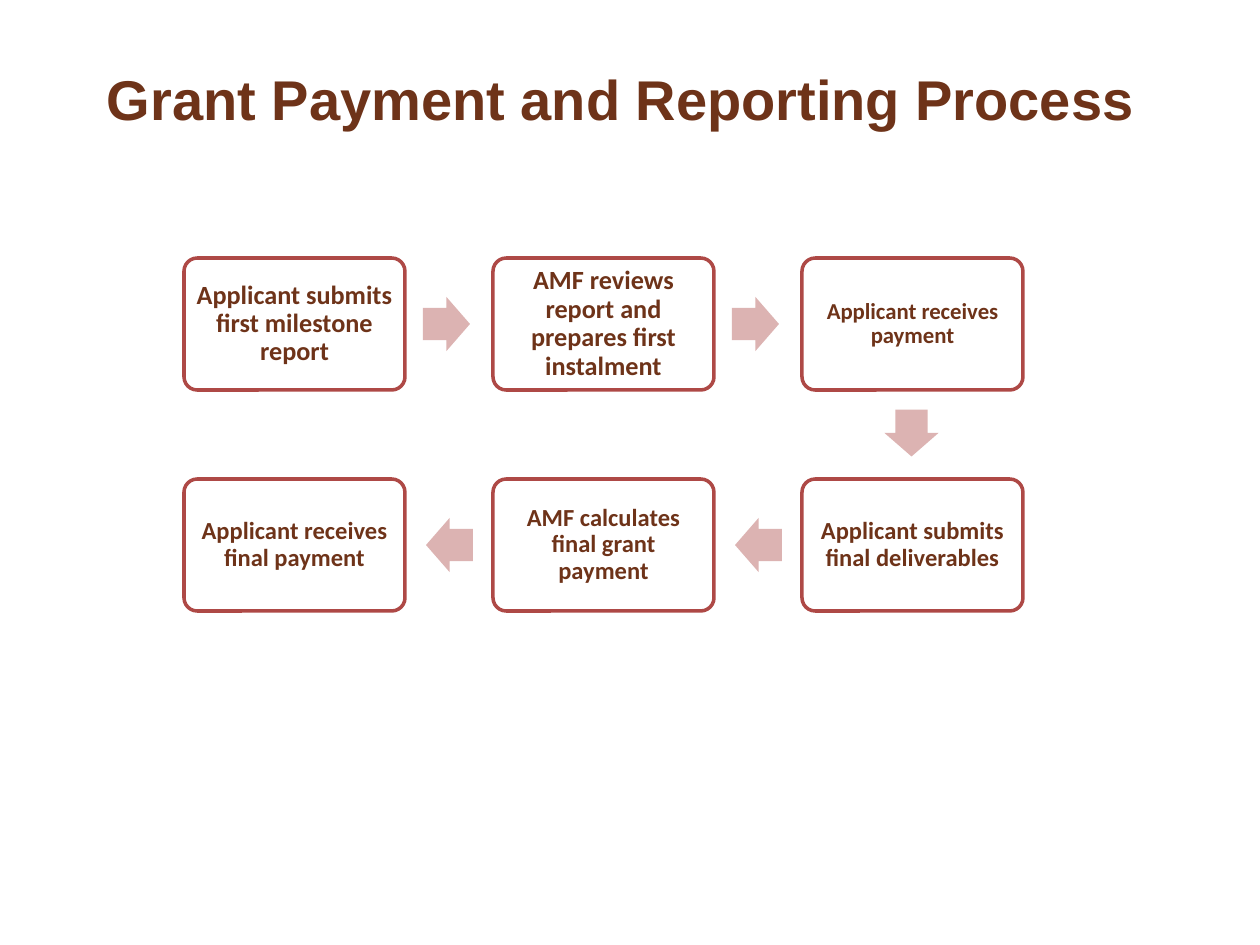
from pptx import Presentation
from pptx.dml.color import RGBColor
from pptx.enum.shapes import MSO_SHAPE
from pptx.enum.text import MSO_ANCHOR, PP_ALIGN
from pptx.util import Pt

PX = 914400 // 126
BROWN = RGBColor(0x6E, 0x33, 0x19)
RED = RGBColor(0xAE, 0x49, 0x46)
PINK = RGBColor(0xDC, 0xB3, 0xB2)
WHITE = RGBColor(0xFF, 0xFF, 0xFF)
ROUNDED = MSO_SHAPE.ROUNDED_RECTANGLE
ARROW = MSO_SHAPE.RIGHT_ARROW
CENTER = PP_ALIGN.CENTER
MIDDLE = MSO_ANCHOR.MIDDLE

LEFT, TOP = 184, 258
COLUMN_STEP, ROW_STEP = 309, 221
BOX_WIDTH, BOX_HEIGHT = 221, 132
ARROW_WIDTH, ARROW_HEIGHT = 47, 54

STEPS = [
    (0, 0, "Applicant submits first milestone report", 15),
    (1, 0, "AMF reviews report and prepares first instalment", 15),
    (2, 0, "Applicant receives payment", 13),
    (2, 1, "Applicant submits final deliverables", 14),
    (1, 1, "AMF calculates final grant payment", 14),
    (0, 1, "Applicant receives final payment", 14),
]
ARROWS = [
    (423, 297, 0),
    (732, 297, 0),
    (888, 406, 90),
    (735, 518, 180),
    (426, 518, 180),
]


def add_text(paragraph, text, font_name, size):
    paragraph.alignment = CENTER
    run = paragraph.add_run()
    run.text = text
    run.font.name = font_name
    run.font.size = Pt(size)
    run.font.bold = True
    run.font.color.rgb = BROWN


presentation = Presentation()
presentation.slide_width = 1260 * PX
presentation.slide_height = 945 * PX
slide = presentation.slides.add_slide(presentation.slide_layouts[6])

title = slide.shapes.add_textbox(54 * PX, 53 * PX, 1134 * PX, 101 * PX)
title.text_frame.word_wrap = True
title.text_frame.margin_top = 12 * PX
add_text(title.text_frame.paragraphs[0], "Grant Payment and Reporting Process", "Arial", 32)

for column, row, text, size in STEPS:
    box = slide.shapes.add_shape(
        ROUNDED,
        (LEFT + column * COLUMN_STEP) * PX,
        (TOP + row * ROW_STEP) * PX,
        BOX_WIDTH * PX,
        BOX_HEIGHT * PX,
    )
    box.adjustments[0] = 0.1
    box.shadow.inherit = False
    box.fill.solid()
    box.fill.fore_color.rgb = WHITE
    box.line.color.rgb = RED
    box.line.width = Pt(2)
    frame = box.text_frame
    frame.word_wrap = True
    frame.vertical_anchor = MIDDLE
    frame.margin_left = frame.margin_right = 7 * PX
    frame.margin_top = frame.margin_bottom = 7 * PX
    paragraph = frame.paragraphs[0]
    paragraph.line_spacing = 0.9
    add_text(paragraph, text, "Calibri", size)

for left, top, rotation in ARROWS:
    arrow = slide.shapes.add_shape(
        ARROW, left * PX, top * PX, ARROW_WIDTH * PX, ARROW_HEIGHT * PX
    )
    arrow.adjustments[0] = 0.6
    arrow.adjustments[1] = 0.5
    arrow.rotation = rotation
    arrow.shadow.inherit = False
    arrow.fill.solid()
    arrow.fill.fore_color.rgb = PINK
    arrow.line.fill.background()

presentation.save("out.pptx")
